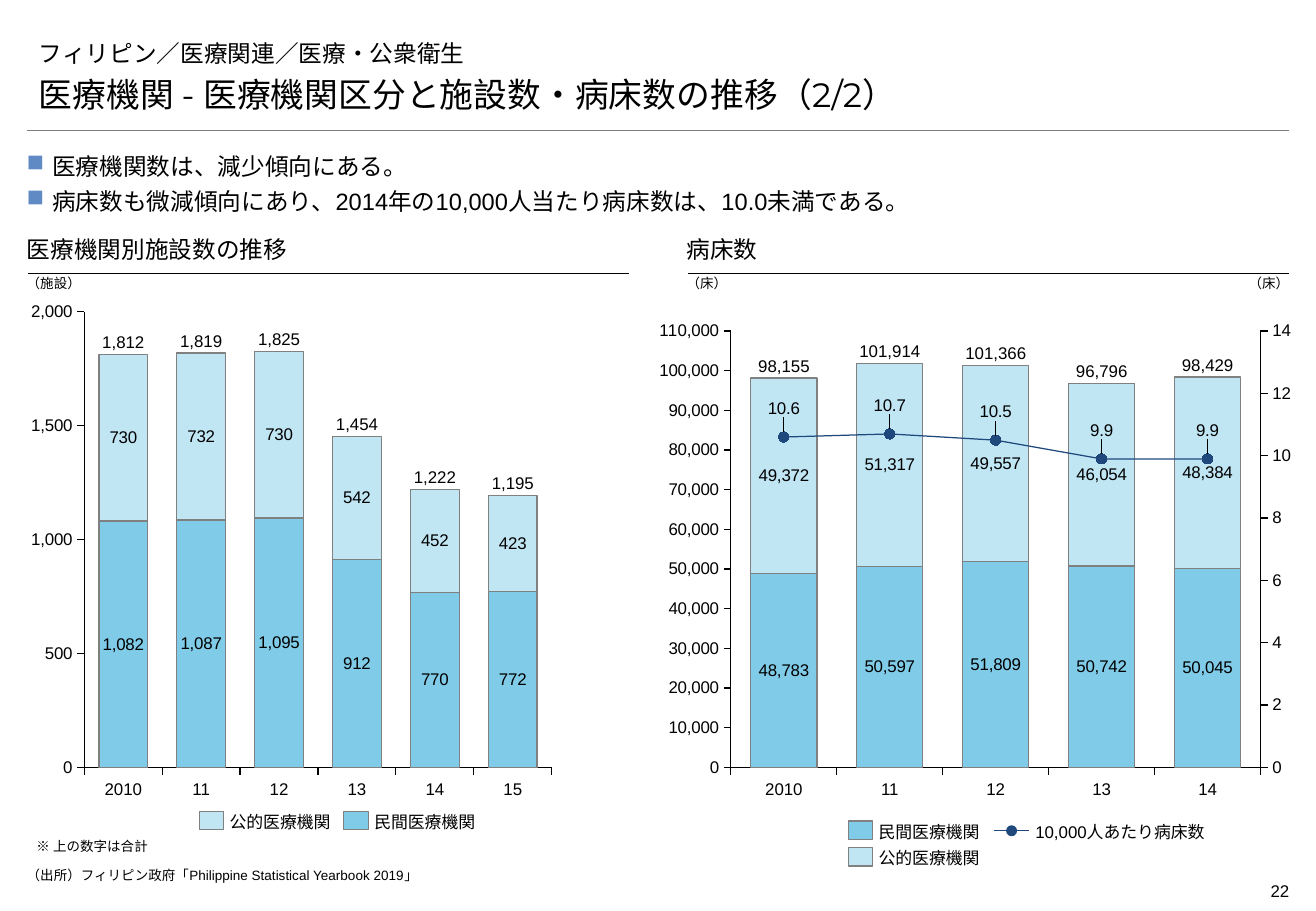
from copy import deepcopy
from lxml.etree import SubElement
from pptx import Presentation
from pptx.chart.axis import ValueAxis
from pptx.chart.data import CategoryChartData as Data
from pptx.dml.color import RGBColor
from pptx.enum.chart import XL_CHART_TYPE as Kind, XL_LABEL_POSITION as Spot
from pptx.enum.chart import XL_MARKER_STYLE as Mark, XL_TICK_LABEL_POSITION as Ticks
from pptx.enum.chart import XL_TICK_MARK as Tick
from pptx.enum.shapes import MSO_CONNECTOR as Link, MSO_SHAPE as Form
from pptx.enum.text import MSO_ANCHOR as Anchor, MSO_AUTO_SIZE as Fit, PP_ALIGN as Align
from pptx.oxml import parse_xml
from pptx.oxml.ns import nsdecls, qn
from pptx.util import Inches, Pt

WIDE, HIGH = Inches(10.83), Inches(7.5)
BLACK = RGBColor(0x00, 0x00, 0x00)
GRAY = RGBColor(0x7F, 0x7F, 0x7F)
EDGE = RGBColor(0x80, 0x80, 0x80)
BLUE = RGBColor(0x80, 0xCC, 0xE8)
PALE = RGBColor(0xC0, 0xE6, 0xF4)
NAVY = RGBColor(0x1F, 0x49, 0x7D)
LEFT, SPAN = 2.03, 95.94
COMMA = '#,##0;"-"#,##0'
PRIVATE, PUBLIC, RATE = "民間医療機関", "公的医療機関", "10,000人あたり病床数"
C15 = "http://schemas.microsoft.com/office/drawing/2012/chart"


def place(x, y, w, h):
    """Turn percent shares of the slide into lengths."""
    return [int(v * side / 100) for v, side in ((x, WIDE), (y, HIGH), (w, WIDE), (h, HIGH))]


def style(run, size, face="Arial"):
    """Set the font of a run."""
    run.font.size, run.font.name = Pt(size), face
    run.font.color.rgb = BLACK


def fill(frame, lines, size, face="Arial", align=Align.LEFT, anchor=Anchor.TOP,
         inset=(0, 0, 0, 0), wrap=True):
    """Write lines into a text frame."""
    frame.auto_size, frame.word_wrap, frame.vertical_anchor = Fit.NONE, wrap, anchor
    (frame.margin_left, frame.margin_top,
     frame.margin_right, frame.margin_bottom) = map(Inches, inset)
    for n, line in enumerate(lines):
        para = frame.add_paragraph() if n else frame.paragraphs[0]
        para.alignment = align
        style(para.add_run(), size, face)
        para.runs[0].text = line


def label(slide, box, line, size=10, **look):
    """Add a one-line text box."""
    fill(slide.shapes.add_textbox(*place(*box)).text_frame, [line], size, **look)


def rule(slide, x, y, w, color, weight):
    """Draw a level line."""
    x, y, w, _ = place(x, y, w, 0)
    line = slide.shapes.add_connector(Link.STRAIGHT, x, y, x + w, y)
    line.line.color.rgb, line.line.width = color, Pt(weight)
    SubElement(line._element.spPr, qn("a:effectLst"))


def header(slide, box, topic, title):
    """Place the topic, the title and the rule below."""
    x, y, w, h = box
    look = dict(face="Montserrat", anchor=Anchor.BOTTOM, inset=(0.1, 0.05, 0.1, 0.05))
    head = slide.shapes.title
    head.left, head.top, head.width, head.height = place(x, y, w, h)
    fill(head.text_frame, [topic], 14, **look)
    label(slide, (x, y + h, w, h), title, 20, **look)
    rule(slide, x, 14.27, w, GRAY, 0.25)


def points(slide, box, lines):
    """Place the bulleted lines."""
    frame = slide.shapes.add_textbox(*place(*box)).text_frame
    fill(frame, lines, 14, align=Align.JUSTIFY)
    for para in frame.paragraphs:
        props = para._p.get_or_add_pPr()
        props.set("marL", str(Inches(0.21)))
        props.set("indent", str(-Inches(0.21)))
        SubElement(SubElement(props, qn("a:buClr")), qn("a:srgbClr"), val="5F8AC3")
        SubElement(props, qn("a:buChar"), char="■")
        para.line_spacing, para.space_after = 1.1, Pt(2)


def panel(slide, x, title, units):
    """Place a panel heading with its rule and units."""
    y, w, h = 25.87, 45.8, 4.13
    rule(slide, x + 0.09, y + h, w - 0.09, BLACK, 0.75)
    label(slide, (x, y, w, h), title, 14, face="Montserrat", anchor=Anchor.BOTTOM,
          inset=(0, 0.05, 0, 0.08))
    for spot, unit, align in zip((x, x + w - 5.08), units, (Align.LEFT, Align.RIGHT)):
        label(slide, (spot, y + h, 5.08, 2.13), unit, 8, align=align, anchor=Anchor.MIDDLE)


def scale(axis, top, step):
    """Set the range and look of a value axis."""
    axis.minimum_scale, axis.maximum_scale, axis.major_unit = 0, top, step
    axis.has_major_gridlines = False
    axis.tick_labels.number_format = COMMA
    axis.tick_labels.number_format_is_linked = False


def second(chart, top, step):
    """Move the last series to a line on a right axis."""
    area = chart._chartSpace.chart.plotArea
    bars = area.find(qn("c:barChart"))
    line = parse_xml(f'<c:lineChart {nsdecls("c")}><c:grouping val="standard"/>'
                     '<c:varyColors val="0"/><c:marker val="1"/>'
                     '<c:axId val="7001"/><c:axId val="7002"/></c:lineChart>')
    row = bars.findall(qn("c:ser"))[-1]
    for flag in row.findall(qn("c:invertIfNegative")):
        row.remove(flag)
    line.insert(2, row)
    bars.addnext(line)
    cat, val = (deepcopy(area.find(qn(tag))) for tag in ("c:catAx", "c:valAx"))
    for axis, own, other in ((cat, "7001", "7002"), (val, "7002", "7001")):
        axis.find(qn("c:axId")).set("val", own)
        axis.find(qn("c:crossAx")).set("val", other)
    cat.find(qn("c:delete")).set("val", "1")
    val.find(qn("c:axPos")).set("val", "r")
    val.find(qn("c:crosses")).set("val", "max")
    area.findall(qn("c:valAx"))[-1].addnext(val)
    val.addnext(cat)
    scale(ValueAxis(val), top, step)
    rate = chart.plots[1].series[0]
    rate.smooth = False
    rate.format.line.color.rgb, rate.format.line.width = NAVY, Pt(0.75)
    rate.marker.style, rate.marker.size = Mark.CIRCLE, 6
    rate.marker.format.fill.solid()
    rate.marker.format.fill.fore_color.rgb = NAVY
    rate.marker.format.line.color.rgb = NAVY
    tags = rate.data_labels
    tags.show_value, tags.position = True, Spot.ABOVE
    for n, _ in enumerate(rate.values):
        rate.points[n].data_label.position = Spot.ABOVE
    for tag in tags._element.findall(qn("c:dLbl")):
        tag.insert(1, parse_xml(f'<c:layout {nsdecls("c")}><c:manualLayout><c:x val="0"/>'
                                '<c:y val="-0.02"/></c:manualLayout></c:layout>'))
    tags._element.append(parse_xml(
        f'<c:extLst {nsdecls("c")}><c:ext uri="{{CE6537A1-D6FC-4f65-9D91-7224C49458BB}}" '
        f'xmlns:c15="{C15}"><c15:showLeaderLines val="1"/></c:ext></c:extLst>'))


def stack(slide, box, plot, years, rows, top, step, rates=None):
    """Place a stacked column chart with totals and years."""
    data = Data(number_format="#,##0")
    data.categories = years
    for name, row in zip((PRIVATE, PUBLIC), rows):
        data.add_series(name, row)
    if rates:
        data.add_series(RATE, rates, number_format="0.0")
    chart = slide.shapes.add_chart(Kind.COLUMN_STACKED, *place(*box), data).chart
    chart.has_legend = chart.has_title = False
    chart.font.size, chart.font.name, chart.font.color.rgb = Pt(10), "Arial", BLACK
    bars = chart.plots[0]
    bars.gap_width, bars.overlap, bars.vary_by_categories = 60, 100, False
    for bar, color in zip(bars.series, (BLUE, PALE)):
        bar.format.fill.solid()
        bar.format.fill.fore_color.rgb = color
        bar.format.line.color.rgb, bar.format.line.width = EDGE, Pt(0.75)
        bar.data_labels.show_value, bar.data_labels.position = True, Spot.CENTER
    for axis in (chart.category_axis, chart.value_axis):
        axis.major_tick_mark, axis.minor_tick_mark = Tick.OUTSIDE, Tick.NONE
        axis.format.line.color.rgb, axis.format.line.width = BLACK, Pt(0.75)
    chart.category_axis.tick_label_position = Ticks.NONE
    scale(chart.value_axis, top, step)
    if rates:
        second(chart, 14, 2)
    area = chart._chartSpace.chart.plotArea
    for old in area.findall(qn("c:layout")):
        area.remove(old)
    sizes = "".join(f'<c:{k} val="{v}"/>' for k, v in zip("xywh", plot))
    area.insert(0, parse_xml(
        f'<c:layout {nsdecls("c")}><c:manualLayout><c:layoutTarget val="inner"/>'
        f'<c:xMode val="edge"/><c:yMode val="edge"/>{sizes}</c:manualLayout></c:layout>'))
    x, y, w, h = box
    col, tall = w * plot[2] / len(years), h * plot[3]
    base = y + h * plot[1] + tall
    for n, (year, total) in enumerate(zip(years, map(sum, zip(*rows)))):
        spot = x + w * plot[0] + n * col
        look = dict(align=Align.CENTER, wrap=False)
        label(slide, (spot, 85.47, col, 2.27), year, **look)
        label(slide, (spot, base - tall * total / top - 2.53, col, 2.27), f"{total:,}",
              anchor=Anchor.BOTTOM, **look)


def shape(slide, form, box, color, edge):
    """Add a filled shape with a thin edge."""
    item = slide.shapes.add_shape(form, *place(*box))
    item.shadow.inherit = False
    item.fill.solid()
    item.fill.fore_color.rgb = color
    item.line.color.rgb, item.line.width = edge, Pt(0.75)


def key(slide, x, y, name, color):
    """Place one legend entry, a line for the rate or a swatch."""
    gap = 2.31
    if name == RATE:
        gap = 3.14
        rule(slide, x, y + 1.07, 2.68, color, 0.75)
        shape(slide, Form.OVAL, (x + 0.97, y + 0.53, 0.74, 1.07), color, color)
    else:
        shape(slide, Form.RECTANGLE, (x, y, 1.85, 2), color, EDGE)
    label(slide, (x + gap, y, 12.4, 2.27), name, anchor=Anchor.MIDDLE, wrap=False)


def main():
    """Build the slide."""
    deck = Presentation()
    deck.slide_width, deck.slide_height = WIDE, HIGH
    slide = deck.slides.add_slide(deck.slide_layouts[5])
    header(slide, (LEFT, 2.8, SPAN, 5.2), "フィリピン／医療関連／医療・公衆衛生",
           "医療機関 - 医療機関区分と施設数・病床数の推移（2/2）")
    points(slide, (LEFT, 16.4, SPAN, 6.93), [
        "医療機関数は、減少傾向にある。",
        "病床数も微減傾向にあり、2014年の10,000人当たり病床数は、10.0未満である。"])
    years = ["2010", "11", "12", "13", "14", "15"]
    panel(slide, LEFT, "医療機関別施設数の推移", ["（施設）"])
    stack(slide, (1.02, 32.8, 41.74, 52.93), (0.129, 0.027, 0.851, 0.946), years,
          [(1082, 1087, 1095, 912, 770, 772), (730, 732, 730, 542, 452, 423)], 2000, 500)
    panel(slide, 52.17, "病床数", ["（床）", "（床）"])
    stack(slide, (48.75, 34.93, 50.69, 50.8), (0.134, 0.028, 0.794, 0.943), years[:5],
          [(48783, 50597, 51809, 50742, 50045), (49372, 51317, 49557, 46054, 48384)],
          110000, 10000, (10.6, 10.7, 10.5, 9.9, 9.9))
    for entry in ((15.14, 89.07, PUBLIC, PALE), (26.13, 89.07, PRIVATE, BLUE),
                  (64.45, 90.13, PRIVATE, BLUE), (64.45, 93.07, PUBLIC, PALE),
                  (75.53, 90.13, RATE, NAVY)):
        key(slide, *entry)
    label(slide, (2.77, 92, 8.59, 1.73), "※ 上の数字は合計", 8, wrap=False)
    label(slide, (LEFT, 95.2, 93.81, 2.8),
          "（出所）フィリピン政府「Philippine Statistical Yearbook 2019」", 8)
    label(slide, (90.77, 96, 7.2, 3.6), "22", align=Align.RIGHT, inset=(0, 0.05, 0, 0.05))
    deck.save("out.pptx")


if __name__ == "__main__":
    main()
